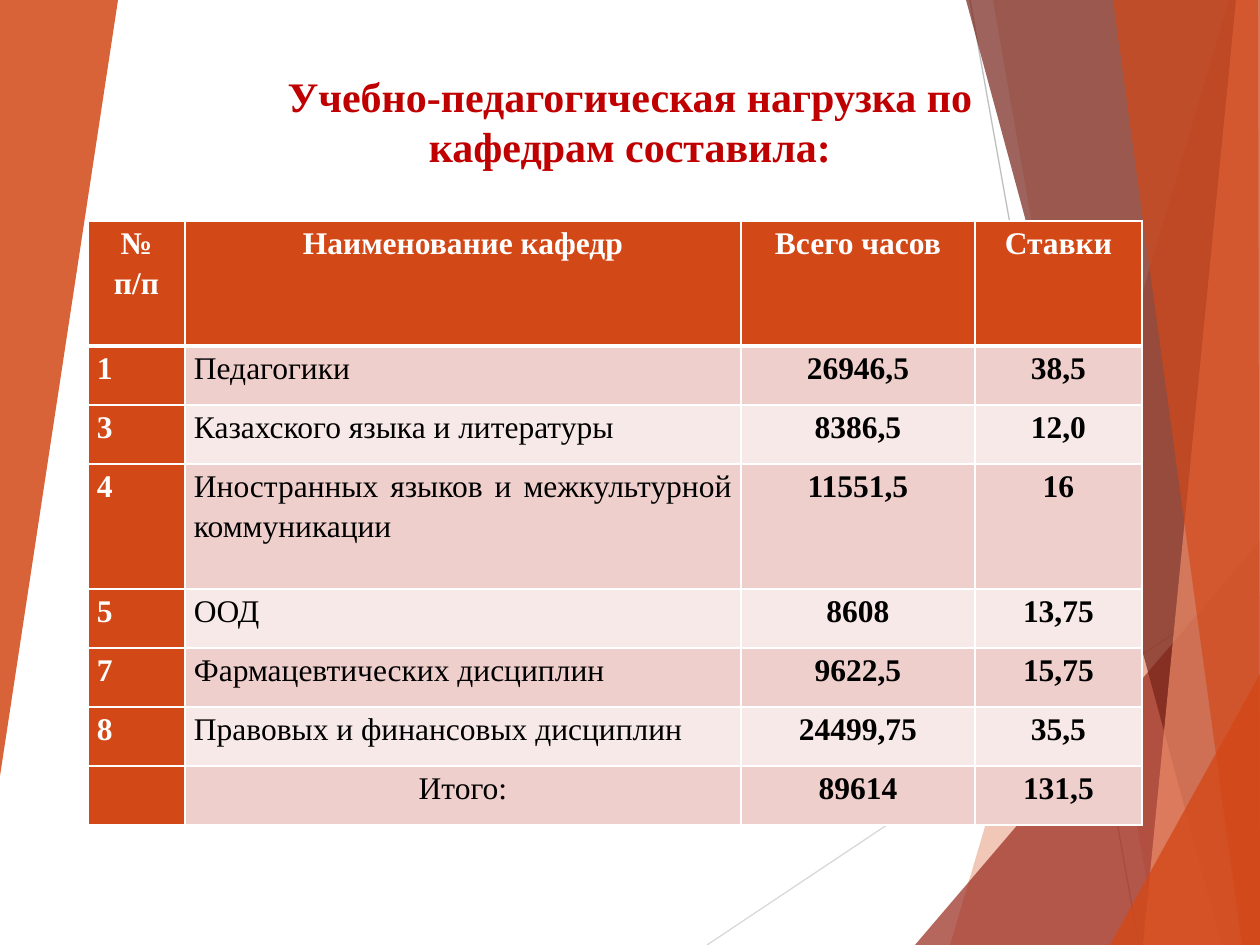
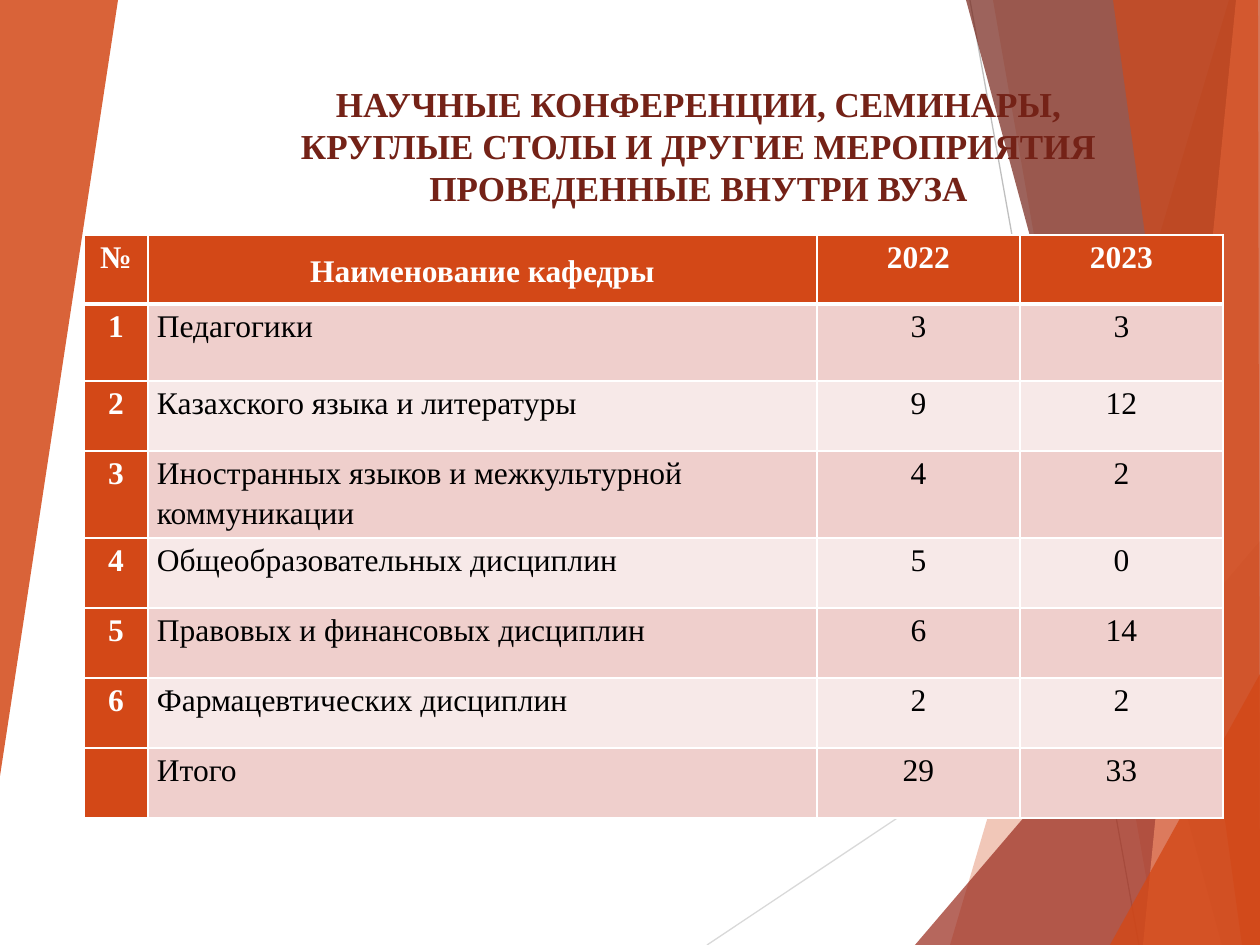
from lxml.etree import SubElement as Sub
from pptx import Presentation
from pptx.dml.color import RGBColor as Rgb
from pptx.enum.shapes import MSO_CONNECTOR as Link
from pptx.enum.text import MSO_ANCHOR as Anchor, PP_ALIGN as Align
from pptx.oxml.ns import qn
from pptx.util import Emu, Pt

SCALE = 914400 / 126
WIDE, HIGH = 1260, 945
FONT = "Times New Roman"
HUES = {
    "white": "FFFFFF", "black": "000000", "red": "C00000",
    "orange": "D34817", "brick": "9B2D1F", "brown": "742217",
    "peach": "EF8C6A", "pink": "EFCFCC", "pale": "F7E9E8",
    "light": "D9D9D9", "gray": "BFBFBF",
}
LINES = [(707, 945, 1260, 576, "light"), (970, 0, 1139, 945, "gray")]
BANDS = [
    ("orange", 30, [(1229, 0), (950, HIGH), (WIDE, HIGH), (WIDE, 0)]),
    ("orange", 20, [(993, 0), (1158, HIGH), (WIDE, HIGH), (WIDE, 0)]),
    ("brick", 72, [(915, HIGH), (WIDE, 541), (WIDE, HIGH)]),
    ("brown", 70, [(966, 0), (1222, HIGH), (WIDE, HIGH), (WIDE, 0)]),
    ("peach", 70, [(1236, 0), (1143, HIGH), (WIDE, HIGH), (WIDE, 0)]),
    ("orange", 65, [(1113, 0), (1242, HIGH), (WIDE, HIGH), (1258, 0)]),
    ("orange", 80, [(1110, HIGH), (WIDE, 674), (WIDE, HIGH)]),
    ("orange", 85, [(0, 0), (118, 0), (0, 776)]),
]

LOAD = [
    ("№\nп/п", "Наименование кафедр", "Всего часов", "Ставки"),
    ("1", "Педагогики", "26946,5", "38,5"),
    ("3", "Казахского языка и литературы", "8386,5", "12,0"),
    ("4", "Иностранных языков и межкультурной коммуникации", "11551,5", "16"),
    ("5", "ООД", "8608", "13,75"),
    ("7", "Фармацевтических дисциплин", "9622,5", "15,75"),
    ("8", "Правовых и финансовых дисциплин", "24499,75", "35,5"),
    ("", "Итого:", "89614", "131,5"),
]
EVENTS = [
    ("№", "Наименование кафедры", "2022", "2023"),
    ("1", "Педагогики", "3", "3"),
    ("2", "Казахского языка и литературы", "9", "12"),
    ("3", "Иностранных языков и межкультурной коммуникации", "4", "2"),
    ("4", "Общеобразовательных дисциплин", "5", "0"),
    ("5", "Правовых и финансовых дисциплин", "6", "14"),
    ("6", "Фармацевтических дисциплин", "2", "2"),
    ("", "Итого", "29", "33"),
]


def px(size):
    return Emu(round(size * SCALE))


def rgb(hue):
    return Rgb.from_string(HUES[hue])


def write(frame, words, size=18, hue="black", bold=False,
          align=Align.CENTER, space=None):
    frame.word_wrap = True
    for i, line in enumerate(words.split("\n")):
        para = frame.add_paragraph() if i else frame.paragraphs[0]
        para.alignment = align
        para.line_spacing = space
        run = para.add_run()
        run.text = line
        font = run.font
        font.name, font.size, font.bold = FONT, Pt(size), bold
        font.color.rgb = rgb(hue)


def draw_line(group, x1, y1, x2, y2, hue):
    line = group.shapes.add_connector(
        Link.STRAIGHT, px(x1), px(y1), px(x2), px(y2))
    line.line.color.rgb = rgb(hue)
    line.line.width = Pt(0.75)
    Sub(line.element.spPr, qn("a:effectLst"))


def draw_band(group, hue, alpha, points):
    path = group.shapes.build_freeform(*points[0], scale=SCALE)
    path.add_line_segments(points[1:], close=True)
    band = path.convert_to_shape()
    band.shadow.inherit = False
    band.line.fill.background()
    band.fill.solid()
    band.fill.fore_color.rgb = rgb(hue)
    color = band.element.spPr.find(".//" + qn("a:srgbClr"))
    Sub(color, qn("a:alpha"), val=str(alpha * 1000))


def set_back(layout, slide):
    for item in list(layout.placeholders):
        if item.placeholder_format.idx:
            item.element.getparent().remove(item.element)
    group = slide.shapes.add_group_shape()
    for line in LINES:
        draw_line(group, *line)
    for band in BANDS:
        draw_band(group, *band)
    layout.shapes.element.append(group.element)


def set_title(slide, box, words, anchor, **style):
    title = slide.shapes.title
    title.left, title.top, title.width, title.height = map(px, box)
    title.text_frame.vertical_anchor = anchor
    write(title.text_frame, words, bold=True, **style)


def set_edges(cell, row):
    props = cell._tc.get_or_add_tcPr()
    widths = {"L": 1, "R": 1, "T": 3 if row == 1 else 1, "B": 1 if row else 3}
    for side, width in widths.items():
        edge = Sub(props, qn("a:ln" + side), w=str(Pt(width)))
        fill = Sub(edge, qn("a:solidFill"))
        Sub(fill, qn("a:srgbClr"), val=HUES["white"])


def set_cell(cell, row, col, words, bold, align):
    head = row == 0 or col == 0
    cell.margin_left = cell.margin_right = px(9)
    cell.margin_top = cell.margin_bottom = 0
    set_edges(cell, row)
    cell.fill.solid()
    cell.fill.fore_color.rgb = rgb(
        "orange" if head else "pink" if row % 2 else "pale")
    if words:
        write(cell.text_frame, words, hue="white" if head else "black",
              bold=head or bold, align=align, space=1.15)


def set_grid(slide, left, top, data, wides, highs, aligns,
             bold=False, total=None):
    box = map(px, (left, top, sum(wides), sum(highs)))
    grid = slide.shapes.add_table(len(highs), len(wides), *box).table
    grid.first_col = True
    for col, wide in zip(grid.columns, wides):
        col.width = px(wide)
    for row, high in zip(grid.rows, highs):
        row.height = px(high)
    last = len(data) - 1
    for r, line in enumerate(data):
        for c, words in enumerate(line):
            align = aligns[c] if r else Align.CENTER
            if r == last and total:
                align = total
            set_cell(grid.cell(r, c), r, c, words, bold and c > 1, align)
    return grid


def load_slide(slide):
    set_title(slide, (185, 63, 890, 115),
              "Учебно-педагогическая нагрузка по кафедрам составила:",
              Anchor.MIDDLE, size=24, hue="red")
    mid, full = Align.CENTER, Align.JUSTIFY
    highs = [59 if i not in (0, 3) else 125 for i in range(len(LOAD))]
    set_grid(slide, 88, 221, LOAD, [97, 556, 234, 167], highs,
             [full, full, mid, mid], bold=True, total=mid)


def event_slide(slide):
    set_title(slide, (234, 76, 929, 140),
              "НАУЧНЫЕ КОНФЕРЕНЦИИ, СЕМИНАРЫ, КРУГЛЫЕ СТОЛЫ И ДРУГИЕ "
              "МЕРОПРИЯТИЯ ПРОВЕДЕННЫЕ ВНУТРИ ВУЗА",
              Anchor.TOP, size=20, hue="brown")
    mid = Align.CENTER
    grid = set_grid(slide, 84, 235, EVENTS, [64, 669, 203, 203],
                    [69, 77, 70, 87] + [70] * 4, [mid, Align.LEFT, mid, mid])
    grid.cell(0, 1).vertical_anchor = Anchor.MIDDLE


def main():
    deck = Presentation()
    deck.slide_width, deck.slide_height = px(WIDE), px(HIGH)
    layout = deck.slide_layouts[5]
    slides = [deck.slides.add_slide(layout) for _ in range(2)]
    set_back(layout, slides[0])
    load_slide(slides[0])
    event_slide(slides[1])
    deck.save("out.pptx")


if __name__ == "__main__":
    main()
